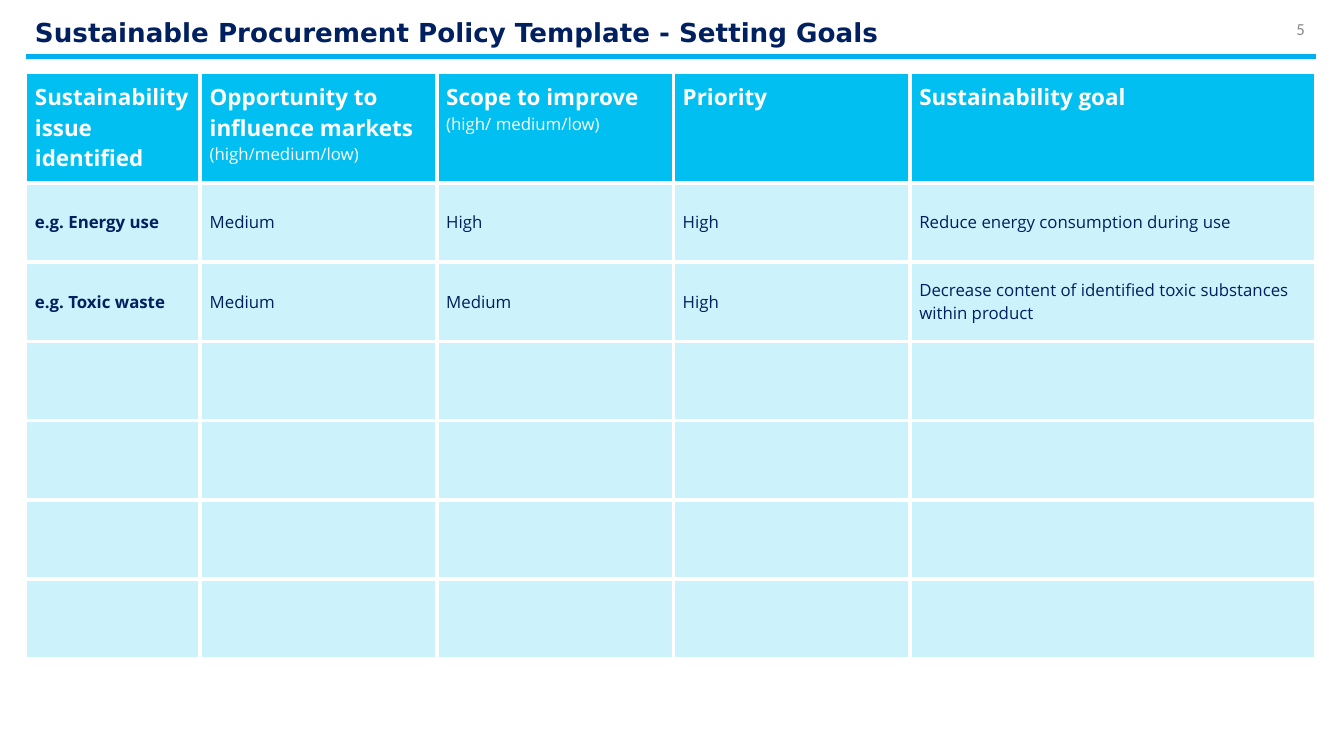
from lxml import etree
from pptx import Presentation
from pptx.dml.color import RGBColor
from pptx.enum.shapes import MSO_CONNECTOR
from pptx.enum.text import MSO_ANCHOR, MSO_AUTO_SIZE, PP_ALIGN
from pptx.oxml.ns import qn
from pptx.util import Inches, Pt

LEFT, RIGHT = PP_ALIGN.LEFT, PP_ALIGN.RIGHT
TOP, MIDDLE = MSO_ANCHOR.TOP, MSO_ANCHOR.MIDDLE
NO_AUTOFIT = MSO_AUTO_SIZE.NONE
STRAIGHT = MSO_CONNECTOR.STRAIGHT
TITLE_ONLY = 5

COLORS = {
    "navy": "002060",
    "rule": "00B0F0",
    "header": "01BFF0",
    "body": "CCF2FC",
    "white": "FFFFFF",
    "grey": "888888",
}
SLIDE_WIDTH = 10
SLIDE_HEIGHT = SLIDE_WIDTH * 9 / 16
MARGIN, CONTENT_WIDTH = 0.19, 9.6
COLUMN_WIDTHS = [1.3, 1.76, 1.76, 1.76, 3.02]
HEADER_HEIGHT, ROW_HEIGHT = 0.77, 0.59
BLANK_ROWS = 4

HEADERS = [
    ("Sustainability issue identified",),
    ("Opportunity to influence markets", "(high/medium/low)"),
    ("Scope to improve", "(high/ medium/low)"),
    ("Priority",),
    ("Sustainability goal",),
]
GOALS = [
    ["e.g. Energy use", "Medium", "High", "High",
     "Reduce energy consumption during use"],
    ["e.g. Toxic waste", "Medium", "Medium", "High",
     "Decrease content of identified toxic substances within product"],
]


def rgb(name):
    """Return the named palette colour."""
    return RGBColor.from_string(COLORS[name])


def write(paragraph, text, font="Open Sans", size=9, color="navy", bold=False,
          align=LEFT, indent=None, line_spacing=None):
    """Put formatted text into a paragraph."""
    if indent is not None:
        properties = paragraph._p.get_or_add_pPr()
        properties.set("marL", str(Inches(indent)))
        properties.set("indent", "0")
    paragraph.alignment = align
    if line_spacing:
        paragraph.line_spacing = line_spacing
    run = paragraph.add_run()
    run.text = text
    run.font.name = font
    run.font.size = Pt(size)
    run.font.bold = bold
    run.font.color.rgb = rgb(color)


def set_frame(frame):
    """Give a text frame its insets, wrapping and anchor."""
    frame.margin_left = frame.margin_right = Inches(0.07)
    frame.margin_top = frame.margin_bottom = Inches(0.04)
    frame.word_wrap = True
    frame.auto_size = NO_AUTOFIT
    frame.vertical_anchor = MIDDLE


def add_title(slide, text):
    """Place and format the slide title."""
    title = slide.shapes.title
    title.left, title.top = Inches(MARGIN), Inches(0.1)
    title.width, title.height = Inches(CONTENT_WIDTH), Inches(0.3)
    set_frame(title.text_frame)
    write(title.text_frame.paragraphs[0], text, font="DejaVu Sans", size=14,
          bold=True, line_spacing=0.9)


def add_title_rule(slide):
    """Draw the line below the title."""
    rule = slide.shapes.add_connector(
        STRAIGHT, Inches(MARGIN), Inches(0.42),
        Inches(MARGIN + CONTENT_WIDTH), Inches(0.42))
    rule.line.color.rgb = rgb("rule")
    rule.line.width = Pt(3)
    etree.SubElement(rule._element.spPr, qn("a:effectLst"))


def add_page_number(slide, number):
    """Add the page number at the upper right."""
    box = slide.shapes.add_textbox(
        Inches(9.33), Inches(0.12), Inches(0.45), Inches(0.19))
    set_frame(box.text_frame)
    write(box.text_frame.paragraphs[0], number, font="Calibri", color="grey",
          align=RIGHT)


def style_cell(cell, fill, inset, anchor):
    """Set the borders, fill, insets and anchor of a cell."""
    properties = cell._tc.get_or_add_tcPr()
    for side in ("lnL", "lnR", "lnT", "lnB"):
        border = etree.SubElement(properties, qn(f"a:{side}"), w=str(Pt(2.25)))
        paint = etree.SubElement(border, qn("a:solidFill"))
        etree.SubElement(paint, qn("a:srgbClr"), val=COLORS["white"])
    cell.fill.solid()
    cell.fill.fore_color.rgb = rgb(fill)
    cell.margin_left = cell.margin_right = 0
    cell.margin_top = cell.margin_bottom = Inches(inset)
    cell.vertical_anchor = anchor


def fill_header(cell, heading, note=None):
    """Write a column heading with its optional rating note."""
    style_cell(cell, "header", 0.07, TOP)
    frame = cell.text_frame
    write(frame.paragraphs[0], heading, size=12, color="white", bold=True,
          indent=0.07)
    if note:
        write(frame.add_paragraph(), note, color="white", indent=0.07)


def add_goals_table(slide):
    """Build the table of issues, ratings and goals."""
    rows = GOALS + [[""] * len(HEADERS)] * BLANK_ROWS
    height = HEADER_HEIGHT + ROW_HEIGHT * len(rows)
    table = slide.shapes.add_table(
        len(rows) + 1, len(HEADERS), Inches(MARGIN), Inches(0.54),
        Inches(CONTENT_WIDTH), Inches(height)).table
    for column, width in zip(table.columns, COLUMN_WIDTHS):
        column.width = Inches(width)
    for row in table.rows:
        row.height = Inches(ROW_HEIGHT)
    table.rows[0].height = Inches(HEADER_HEIGHT)
    for index, header in enumerate(HEADERS):
        fill_header(table.cell(0, index), *header)
    for row_index, row in enumerate(rows, start=1):
        for index, text in enumerate(row):
            cell = table.cell(row_index, index)
            style_cell(cell, "body", 0.03, MIDDLE)
            if text:
                write(cell.text_frame.paragraphs[0], text, bold=index == 0,
                      indent=0.07)


def main():
    """Build and save the slide."""
    presentation = Presentation()
    presentation.slide_width = Inches(SLIDE_WIDTH)
    presentation.slide_height = Inches(SLIDE_HEIGHT)
    slide = presentation.slides.add_slide(
        presentation.slide_layouts[TITLE_ONLY])
    add_title_rule(slide)
    add_title(slide, "Sustainable Procurement Policy Template - Setting Goals")
    add_goals_table(slide)
    add_page_number(slide, "5")
    presentation.save("out.pptx")


if __name__ == "__main__":
    main()
